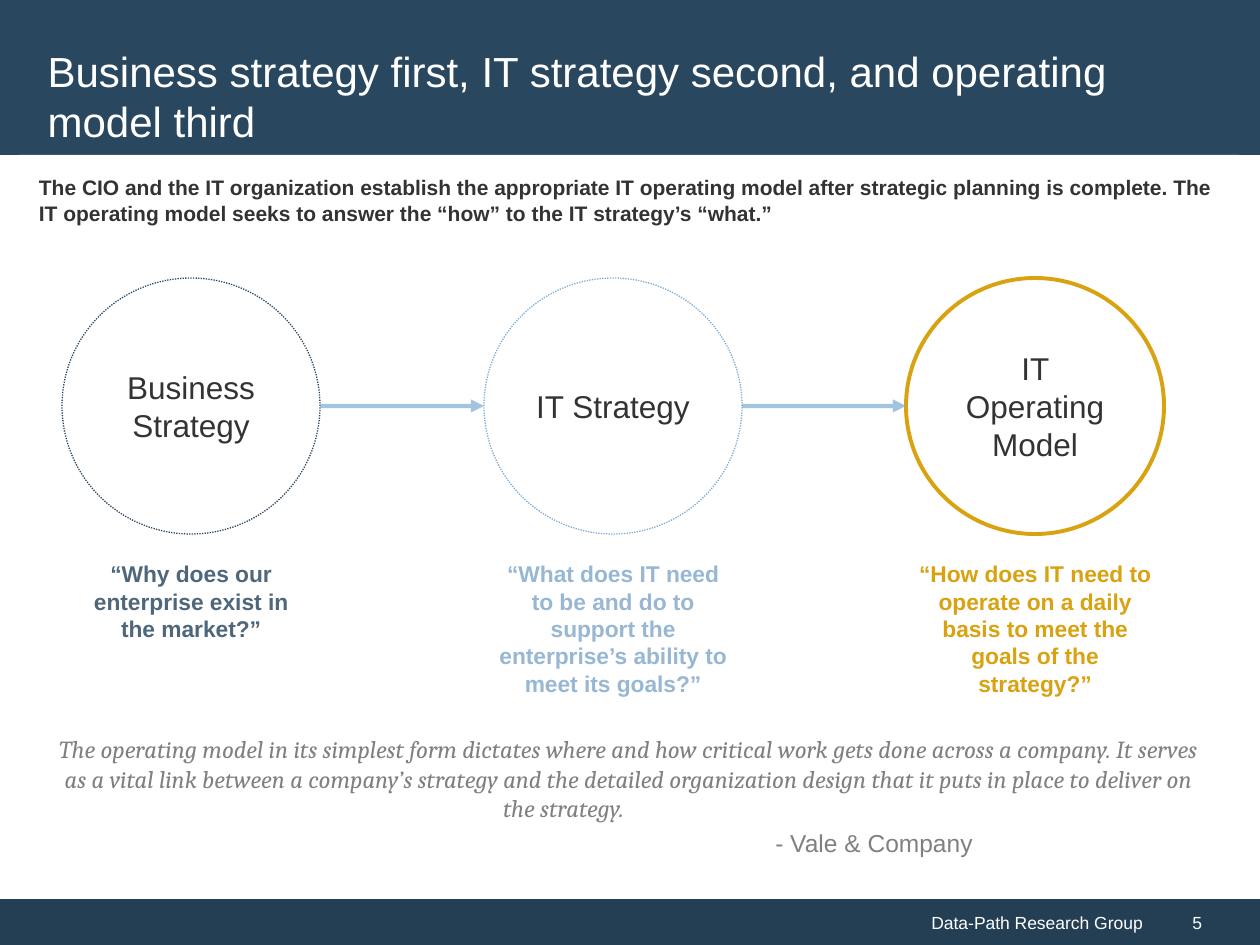
from lxml import etree
from pptx import Presentation, util as u
from pptx.dml.color import RGBColor
from pptx.enum import dml, shapes, text
from pptx.oxml.ns import qn

SCALE = 914400 / 126
NAVY, FOOTER, SKY, GOLD = "29475F", "243F54", "7CADD4", "D9A210"
WHITE, INK, GRAY = "FFFFFF", "333333", "808080"
LEFT, CENTER, RIGHT = text.PP_ALIGN.LEFT, text.PP_ALIGN.CENTER, text.PP_ALIGN.RIGHT
STAGE_LEFT, STAGE_TOP, STAGE_STEP = 62, 278, 422
STAGE_WIDTH, STAGE_HEIGHT = 258, 256
STAGES = [
    ("Business Strategy", NAVY, 0.75, "“Why does our enterprise exist in the market?”", "4E677B", 96),
    ("IT Strategy", SKY, 0.75,
     "“What does IT need to be and do to support the enterprise’s ability to meet its goals?”", "97B7D2", 150),
    ("IT Operating Model", GOLD, 2.25,
     "“How does IT need to operate on a daily basis to meet the goals of the strategy?”", GOLD, 150),
]


def px(*lengths):
    """Turn pixel lengths into EMU."""
    return [u.Emu(round(length * SCALE)) for length in lengths]


def color(hex_code):
    """Turn a hex string into a colour."""
    return RGBColor.from_string(hex_code)


def style(paragraph, size, hex_code, align=LEFT, font="Arial", bold=False, italic=False, indent=0):
    """Format a whole paragraph."""
    paragraph.alignment = align
    paragraph.font.name, paragraph.font.size = font, u.Pt(size)
    paragraph.font.bold, paragraph.font.italic = bold, italic
    paragraph.font.color.rgb = color(hex_code)
    if indent:
        properties = paragraph._p.get_or_add_pPr()
        properties.set("marL", str(px(indent)[0]))
        properties.set("indent", "0")


def add_band(slide, box, fill, words="", size=10, hex_code=WHITE, **looks):
    """Add a plain filled rectangle with optional words."""
    band = slide.shapes.add_shape(shapes.MSO_SHAPE.RECTANGLE, *px(*box))
    band.shadow.inherit = False
    band.fill.solid()
    band.fill.fore_color.rgb = color(fill)
    band.line.fill.background()
    if words:
        band.text_frame.text = words
        style(band.text_frame.paragraphs[0], size, hex_code, **looks)
    return band


def add_circle(slide, left, words, outline, weight):
    """Add an outlined stage circle, dotted when its line is thin."""
    circle = slide.shapes.add_shape(shapes.MSO_SHAPE.OVAL, *px(left, STAGE_TOP, STAGE_WIDTH, STAGE_HEIGHT))
    circle.shadow.inherit = False
    circle.fill.background()
    circle.line.color.rgb = color(outline)
    circle.line.width = u.Pt(weight)
    if weight < 1:
        circle.line.dash_style = dml.MSO_LINE.ROUND_DOT
    circle.text_frame.text = words
    style(circle.text_frame.paragraphs[0], 18, INK, CENTER)


def add_text(slide, box, *lines):
    """Add a wrapping text box and return its paragraphs."""
    frame = slide.shapes.add_textbox(*px(*box)).text_frame
    frame.word_wrap = True
    frame.auto_size = text.MSO_AUTO_SIZE.SHAPE_TO_FIT_TEXT
    frame.text = "\n".join(lines)
    return frame.paragraphs


def add_arrow(slide, start, end, middle):
    """Add a translucent horizontal arrow."""
    arrow = slide.shapes.add_connector(shapes.MSO_CONNECTOR.STRAIGHT, *px(start, middle, end, middle))
    arrow.line.color.rgb = color(SKY)
    arrow.line.width = u.Pt(2.5)
    outline = arrow.line._get_or_add_ln()
    tint = outline.find(".//" + qn("a:srgbClr"))
    etree.SubElement(tint, qn("a:alpha"), val="71000")
    etree.SubElement(outline, qn("a:tailEnd"), type="triangle")
    etree.SubElement(arrow.element.spPr, qn("a:effectLst"))


def add_title(slide, words):
    """Place the title on its header band."""
    header = add_band(slide, (0, 0, 1260, 155), NAVY)
    title = slide.shapes.title
    title.left, title.top, title.width, title.height = px(35, 35, 1188, 121)
    title.text_frame.text = words
    title.text_frame.vertical_anchor = text.MSO_ANCHOR.MIDDLE
    style(title.text_frame.paragraphs[0], 24, WHITE)
    header.element.addnext(title.element)


def add_stages(slide):
    """Add the three circles, their questions and the arrows between them."""
    for index, (name, outline, weight, question, tone, height) in enumerate(STAGES):
        left = STAGE_LEFT + index * STAGE_STEP
        add_circle(slide, left, name, outline, weight)
        if index:
            add_arrow(slide, left - STAGE_STEP + STAGE_WIDTH, left, STAGE_TOP + STAGE_HEIGHT // 2)
        asked, = add_text(slide, (left, 554, STAGE_WIDTH, height), question)
        style(asked, 13, tone, CENTER, bold=True)


def main():
    """Build the slide."""
    deck = Presentation()
    deck.slide_width, deck.slide_height = px(1260, 945)
    slide = deck.slides.add_slide(deck.slide_layouts[5])
    add_band(slide, (0, 899, 1155, 46), FOOTER, "Data-Path Research Group", align=RIGHT)
    add_band(slide, (1155, 899, 105, 46), FOOTER, "5", indent=25)
    add_title(slide, "Business strategy first, IT strategy second, and operating model third")
    summary = add_band(
        slide, (19, 155, 1220, 91), WHITE,
        "The CIO and the IT organization establish the appropriate IT operating model after strategic planning "
        "is complete. The IT operating model seeks to answer the “how” to the IT strategy’s “what.”",
        12, INK, bold=True).text_frame
    summary.margin_left, summary.margin_top, summary.margin_right, summary.margin_bottom = px(20, 20, 20, 20)
    summary.vertical_anchor = text.MSO_ANCHOR.TOP
    add_stages(slide)
    quote, author = add_text(
        slide, (35, 728, 1188, 137),
        "The operating model in its simplest form dictates where and how critical work gets done across a company. "
        "It serves as a vital link between a company’s strategy and the detailed organization design that it puts "
        "in place to deliver on the strategy.\t\t\t",
        "- Vale & Company")
    style(quote, 14, GRAY, CENTER, font="Cambria", italic=True)
    style(author, 14, GRAY, CENTER, indent=490)
    author.space_before = u.Pt(3)
    deck.save("out.pptx")


if __name__ == "__main__":
    main()
